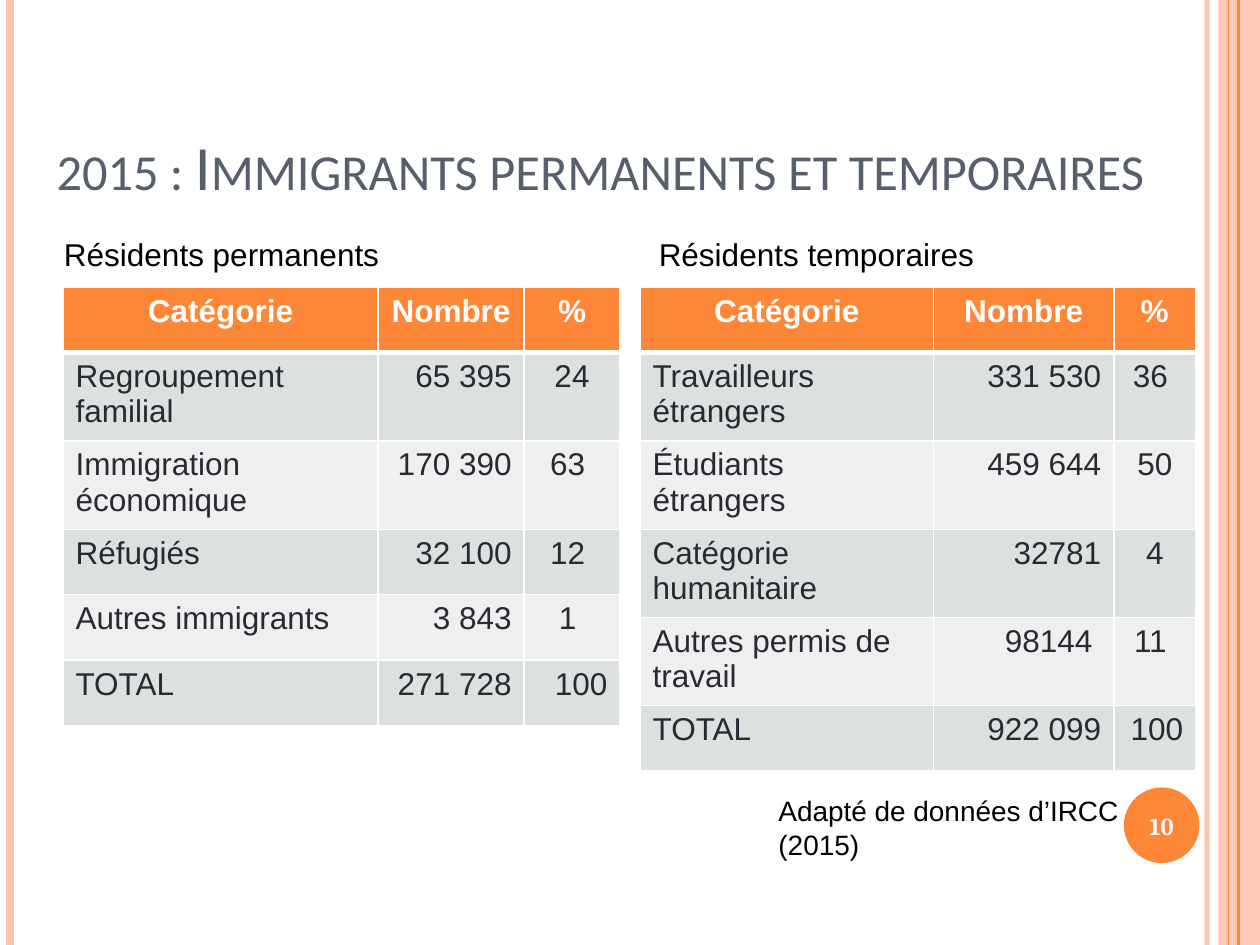
from lxml import etree
from pptx import Presentation
from pptx import util as u
from pptx.dml.color import RGBColor
from pptx.enum import shapes, text
from pptx.oxml import parse_xml
from pptx.oxml.ns import nsdecls, qn

COLORS = {"orange": "FE8637", "peach": "FEC3AE", "slate": "575F6D", "ink": "292934",
          "dark band": "DCE0DE", "light band": "EEF0EF", "white": "FFFFFF", "black": "000000"}
RGB = {name: RGBColor.from_string(value) for name, value in COLORS.items()}
LEFT, CENTER, RIGHT = text.PP_ALIGN.LEFT, text.PP_ALIGN.CENTER, text.PP_ALIGN.RIGHT

deck = Presentation()
deck.slide_width, deck.slide_height = u.Inches(10), u.Inches(7.5)
slide = deck.slides.add_slide(deck.slide_layouts[6])

# Grid of 100 columns by 75 rows
COLUMN, ROW = deck.slide_width / 100, deck.slide_height / 75


def place(x, y, w, h):
    return int(x * COLUMN), int(y * ROW), int(w * COLUMN), int(h * ROW)


def write(frame, words, font, size, color, bold=False, align=LEFT):
    frame.text = words
    frame.word_wrap = True
    paragraph = frame.paragraphs[0]
    paragraph.alignment = align
    run = paragraph.runs[0]
    run.font.name, run.font.size, run.font.bold = font, u.Pt(size), bold
    run.font.color.rgb = RGB[color]
    return run


# Side stripes: column, colour, width, opacity in percent
band = slide.shapes.add_shape(shapes.MSO_SHAPE.RECTANGLE, *place(96.7, 0, 3.3, 75))
band.shadow.inherit = False
band.fill.solid()
band.fill.fore_color.rgb = RGB["peach"]
band.line.fill.background()
translucent = [(band.fill, 87)]

for x, color, width, opacity in [(95.8, "peach", 3, 93), (0.8, "peach", 4.5, 100),
                                 (98.3, "orange", 1.5, 100), (97.5, "orange", 0.75, 100)]:
    left, top, _, height = place(x, 0, 0, 75)
    stripe = slide.shapes.add_connector(shapes.MSO_CONNECTOR.STRAIGHT, left, top, left, height)
    stripe.line.color.rgb = RGB[color]
    stripe.line.width = u.Pt(width)
    properties = stripe._element.spPr
    etree.SubElement(properties, qn("a:effectLst"))
    if opacity < 100:
        translucent.append((stripe.line.fill, opacity))

for fill, opacity in translucent:
    tint = fill._xPr.find(qn("a:solidFill"))[0]
    etree.SubElement(tint, qn("a:alpha")).set("val", str(opacity * 1000))

# Page number
badge = slide.shapes.add_shape(shapes.MSO_SHAPE.OVAL, *place(89.2, 62.5, 6, 6))
badge.shadow.inherit = False
badge.fill.solid()
badge.fill.fore_color.rgb = RGB["orange"]
badge.line.fill.background()
number = badge.text_frame
number.margin_left = number.margin_right = number.margin_top = number.margin_bottom = 0
number.vertical_anchor = text.MSO_ANCHOR.MIDDLE
write(number, "10", "Cambria", 14, "white", True, CENTER)

# Title in small capitals
title = slide.shapes.add_textbox(*place(3.5, 5.8, 93.1, 10.8)).text_frame
title.vertical_anchor = text.MSO_ANCHOR.BOTTOM
title_run = write(title, "2015\u00a0: Immigrants permanents et temporaires", "Calibri", 36, "slate")
title_run.font._element.set("cap", "small")

# Tables: left column, column widths, body rows
HEADER = ("Catégorie", "Nombre", "%")
permanents = [
    ("Regroupement familial", "65 395", "24"),
    ("Immigration économique", "170 390", "63 "),
    ("Réfugiés", "32 100", "12 "),
    ("Autres immigrants", "3 843", "1 "),
    ("TOTAL", "271 728", "100"),
]
temporaires = [
    ("Travailleurs étrangers", "331 530", "36 "),
    ("Étudiants étrangers", "459 644", "50"),
    ("Catégorie humanitaire", "32781", "4"),
    ("Autres permis de travail", "98144 ", "11 "),
    ("TOTAL", "922 099", "100"),
]
for x, widths, body in [(5, (25, 11.6, 7.6), permanents), (50.8, (23.3, 14.3, 6.5), temporaires)]:
    rows = [HEADER] + body
    frame = slide.shapes.add_table(len(rows), len(HEADER),
                                   *place(x, 22.8, sum(widths), 5.2 * len(rows)))
    table = frame.table
    for column, width in zip(table.columns, widths):
        column.width = int(width * COLUMN)
    for r, row in enumerate(rows):
        is_header = r == 0
        shade = "orange" if is_header else ("light band", "dark band")[r % 2]
        for c, words in enumerate(row):
            cell = table.cell(r, c)
            if is_header:
                align = CENTER
            elif row[0] == "TOTAL" and c == 2:
                align = RIGHT
            else:
                align = (LEFT, RIGHT, CENTER)[c]
            write(cell.text_frame, words, "Arial", 18,
                  "white" if is_header else "ink", is_header, align)
            cell.fill.solid()
            cell.fill.fore_color.rgb = RGB[shade]
            # White rules, thicker under the header
            thick_side = {0: "B", 1: "T"}.get(r)
            for position, side in enumerate("LRTB"):
                weight = u.Pt(3 if side == thick_side else 1)
                cell._tc.tcPr.insert(position, parse_xml(
                    f'<a:ln{side} {nsdecls("a")} w="{weight}"><a:solidFill>'
                    f'<a:srgbClr val="{COLORS["white"]}"/></a:solidFill></a:ln{side}>'))

# Table headings and credit for the data
for words, box, size in [("Résidents permanents", (4.1, 18.2, 42, 4), 18),
                         ("Résidents temporaires", (51.3, 18.2, 41.9, 4), 18),
                         ("Adapté de données d’IRCC (2015)", (60.8, 62.5, 31.8, 6.4), 16)]:
    caption = slide.shapes.add_textbox(*place(*box)).text_frame
    write(caption, words, "Arial", size, "black")

deck.save("out.pptx")
